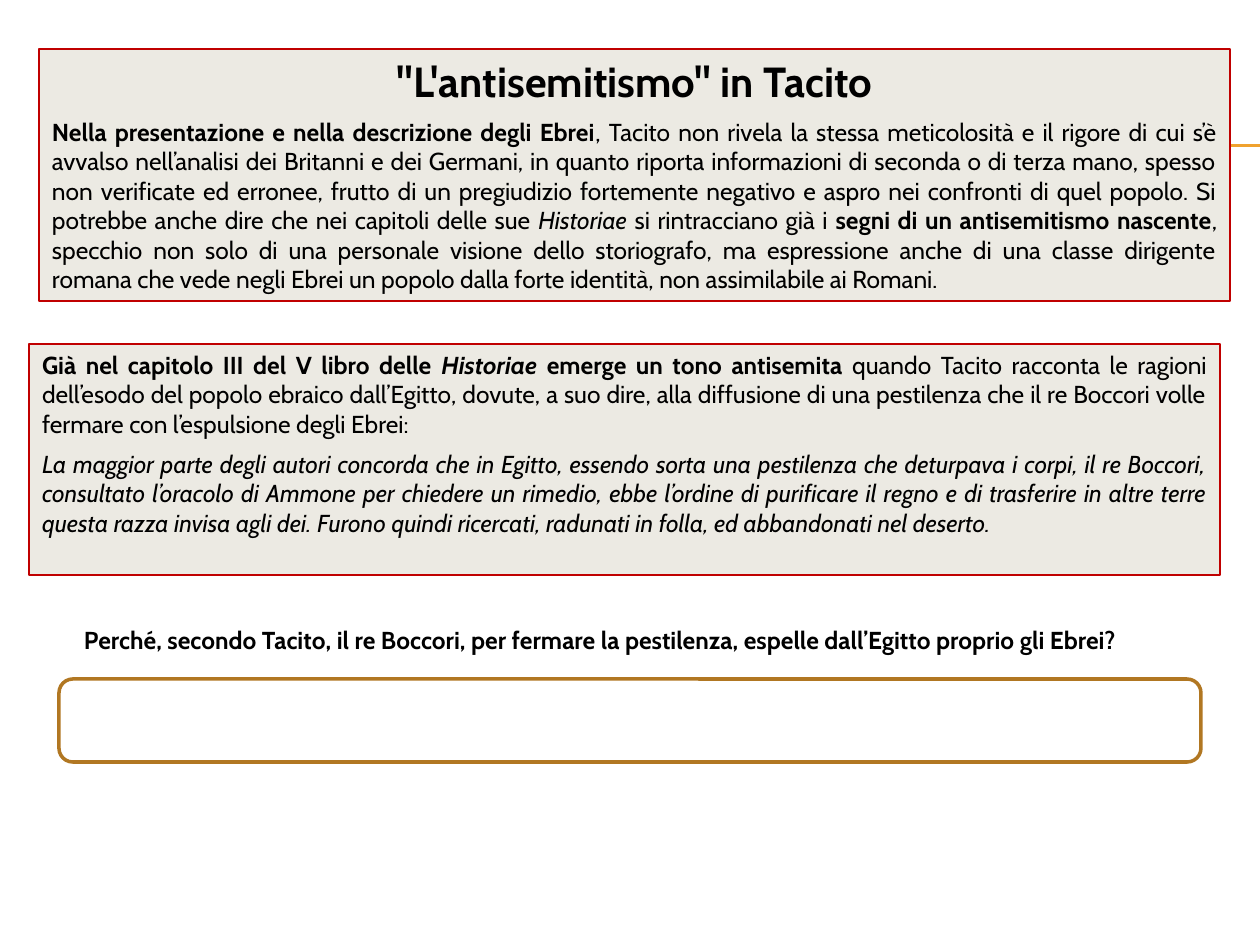
from lxml import etree
from pptx import Presentation
from pptx.dml.color import RGBColor
from pptx.enum.shapes import MSO_CONNECTOR, MSO_SHAPE
from pptx.enum.text import MSO_ANCHOR, MSO_AUTO_SIZE, PP_ALIGN
from pptx.oxml.ns import qn
from pptx.util import Pt

STRAIGHT = MSO_CONNECTOR.STRAIGHT
RECTANGLE = MSO_SHAPE.RECTANGLE
ROUNDED = MSO_SHAPE.ROUNDED_RECTANGLE
TOP = MSO_ANCHOR.TOP
NO_FIT = MSO_AUTO_SIZE.NONE
CENTER = PP_ALIGN.CENTER
JUSTIFY = PP_ALIGN.JUSTIFY

FONT = "Cabin"
BLACK, BEIGE, RED = "000000", "ECEAE3", "C00000"
GOLD, BROWN, WHITE = "F0A22E", "B17722", "FFFFFF"
INSET_X, INSET_Y = 13, 6

HEADING = [[("\"L'antisemitismo\" in Tacito", "b")]]
INTRO = [[
    ("Nella presentazione e nella descrizione degli Ebrei", "b"),
    (", Tacito non rivela la stessa meticolosità e il rigore di cui s’è avvalso "
     "nell’analisi dei Britanni e dei Germani, in quanto riporta informazioni di "
     "seconda o di terza mano, spesso non verificate ed erronee, frutto di un "
     "pregiudizio fortemente negativo e aspro nei confronti di quel popolo. Si "
     "potrebbe anche dire che nei capitoli delle sue ", ""),
    ("Historiae ", "i"),
    ("si rintracciano già i ", ""),
    ("segni di un antisemitismo nascente", "b"),
    (", specchio non solo di una personale visione dello storiografo, ma "
     "espressione anche di una classe dirigente romana che vede negli Ebrei un "
     "popolo dalla forte identità, non assimilabile ai Romani.", ""),
]]
EXODUS = [
    [
        ("Già nel capitolo III del V libro delle ", "b"),
        ("Historiae ", "bi"),
        ("emerge un tono antisemita", "b"),
        (" quando Tacito racconta le ragioni dell’esodo del popolo ebraico "
         "dall’Egitto, dovute, a suo dire, alla diffusione di una pestilenza che "
         "il re Boccori volle fermare con l’espulsione degli Ebrei:", ""),
    ],
    [
        ("La maggior parte degli autori concorda che in Egitto, essendo sorta una "
         "pestilenza che deturpava i corpi, il re Boccori, consultato l’oracolo di "
         "Ammone per chiedere un rimedio, ebbe l’ordine di purificare il regno e di "
         "trasferire in altre terre questa razza invisa agli dei. Furono quindi "
         "ricercati, radunati in folla, ed abbandonati nel deserto.", "i"),
    ],
]
QUESTION = [[
    ("Perché, secondo Tacito, il re Boccori, per fermare la pestilenza, espelle "
     "dall’Egitto proprio gli Ebrei?", "b"),
]]

HEADING_BOX = (39, 49, 1191, 68)
INTRO_BOX = (39, 49, 1191, 252)
EXODUS_BOX = (29, 344, 1191, 231)
QUESTION_BOX = (71, 619, 1126, 42)
ANSWER_BOX = (59, 679, 1142, 83)
RULE_LEFT, RULE_RIGHT, RULE_YS = 71, 1260, (145, 146)


def px(length):
    return round(length * 914400 / 126)


def color(hex_value):
    return RGBColor.from_string(hex_value)


def write(frame, paragraphs, size=14, align=JUSTIFY, top=INSET_Y):
    frame.word_wrap = True
    frame.auto_size = NO_FIT
    frame.vertical_anchor = TOP
    frame.margin_left = frame.margin_right = px(INSET_X)
    frame.margin_top, frame.margin_bottom = px(top), px(INSET_Y)
    for index, runs in enumerate(paragraphs):
        paragraph = frame.add_paragraph() if index else frame.paragraphs[0]
        paragraph.alignment = align
        paragraph.space_after = Pt(6)
        for text, style in runs:
            run = paragraph.add_run()
            run.text = text
            run.font.name = FONT
            run.font.size = Pt(size)
            run.font.bold = "b" in style
            run.font.italic = "i" in style
            run.font.color.rgb = color(BLACK)


def add_panel(shapes, kind, box, fill, line, width):
    panel = shapes.add_shape(kind, *map(px, box))
    panel.shadow.inherit = False
    panel.fill.solid()
    panel.fill.fore_color.rgb = color(fill)
    panel.line.color.rgb = color(line)
    panel.line.width = Pt(width)
    return panel


def main():
    deck = Presentation()
    deck.slide_width, deck.slide_height = px(1260), px(945)
    slide = deck.slides.add_slide(deck.slide_layouts[5])
    shapes = slide.shapes

    for y in RULE_YS:
        rule = shapes.add_connector(STRAIGHT, px(RULE_LEFT), px(y), px(RULE_RIGHT), px(y))
        rule.line.color.rgb = color(GOLD)
        rule.line.width = Pt(0.75)
        etree.SubElement(rule._element.spPr, qn("a:effectLst"))

    intro = add_panel(shapes, RECTANGLE, INTRO_BOX, BEIGE, RED, 1.5)
    write(intro.text_frame, INTRO, top=HEADING_BOX[3])

    heading = shapes.title
    heading.left, heading.top, heading.width, heading.height = map(px, HEADING_BOX)
    write(heading.text_frame, HEADING, size=24, align=CENTER)
    intro._element.addnext(heading._element)

    question = shapes.add_textbox(*map(px, QUESTION_BOX))
    write(question.text_frame, QUESTION)

    add_panel(shapes, ROUNDED, ANSWER_BOX, WHITE, BROWN, 2)

    exodus = add_panel(shapes, RECTANGLE, EXODUS_BOX, BEIGE, RED, 1.5)
    write(exodus.text_frame, EXODUS)

    deck.save("out.pptx")


if __name__ == "__main__":
    main()
